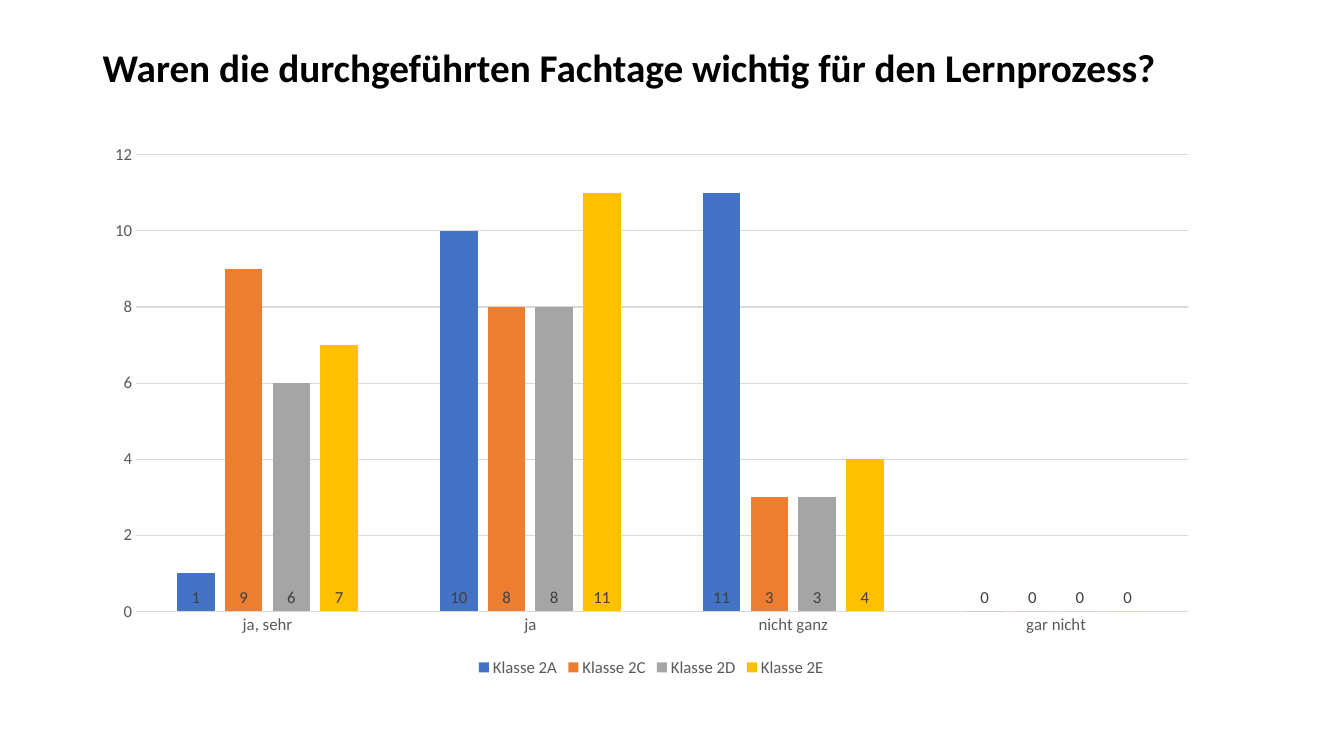
import pptx
import pptx.chart.data
import pptx.dml.color
import pptx.enum.chart
import pptx.enum.text
import pptx.util

EMU_PER_PX = 9144  # 100 px to the inch
COLORS = {
    "title": "000000",
    "axis": "595959",
    "label": "404040",
    "grid": "D9D9D9",
    "Klasse 2A": "4472C4",
    "Klasse 2C": "ED7D31",
    "Klasse 2D": "A5A5A5",
    "Klasse 2E": "FFC000",
}
ANSWERS = ["ja, sehr", "ja", "nicht ganz", "gar nicht"]
VOTES = {
    "Klasse 2A": (1, 10, 11, 0),
    "Klasse 2C": (9, 8, 3, 0),
    "Klasse 2D": (6, 8, 3, 0),
    "Klasse 2E": (7, 11, 4, 0),
}


def px(length):
    return pptx.util.Emu(length * EMU_PER_PX)


def rgb(name):
    return pptx.dml.color.RGBColor.from_string(COLORS[name])


def format_font(font, size, color, bold=False):
    font.name = "Calibri"
    font.size = pptx.util.Pt(size)
    font.bold = bold
    font.color.rgb = rgb(color)


def write_text(text_frame, text, size=12, color="title", bold=False, spacing=1.0):
    paragraph = text_frame.paragraphs[0]
    paragraph.line_spacing = spacing
    run = paragraph.add_run()
    run.text = text
    format_font(run.font, size, color, bold)


class SlideBuilder:
    def __init__(self, slide, chart_size=12):
        self.slide = slide
        self.chart_size = chart_size

    def add_title(self, text, left, top, width, height):
        text_frame = self.slide.shapes.add_textbox(
            px(left), px(top), px(width), px(height)).text_frame
        text_frame.word_wrap = True
        text_frame.vertical_anchor = pptx.enum.text.MSO_ANCHOR.MIDDLE
        write_text(text_frame, text, size=28, bold=True, spacing=0.9)

    def add_column_chart(self, categories, series, left, top, width, height):
        data = pptx.chart.data.CategoryChartData()
        data.categories = categories
        for name, values in series.items():
            data.add_series(name, values)
        chart = self.slide.shapes.add_chart(
            pptx.enum.chart.XL_CHART_TYPE.COLUMN_CLUSTERED,
            px(left), px(top), px(width), px(height), data).chart
        chart.has_title = False
        format_font(chart.font, self.chart_size, "axis")
        self.style_columns(chart.plots[0])
        self.style_axes(chart)

        # Legend
        chart.has_legend = True
        chart.legend.position = pptx.enum.chart.XL_LEGEND_POSITION.BOTTOM
        chart.legend.include_in_layout = False
        format_font(chart.legend.font, self.chart_size, "axis")

    def style_columns(self, plot):
        plot.gap_width = 219
        plot.overlap = -27
        plot.vary_by_categories = False
        for series in plot.series:
            series.format.fill.solid()
            series.format.fill.fore_color.rgb = rgb(series.name)
            labels = series.data_labels
            labels.show_value = True
            labels.position = pptx.enum.chart.XL_LABEL_POSITION.INSIDE_BASE
            format_font(labels.font, self.chart_size, "label")

    def style_axes(self, chart):
        for axis in (chart.category_axis, chart.value_axis):
            axis.major_tick_mark = pptx.enum.chart.XL_TICK_MARK.NONE
            axis.minor_tick_mark = pptx.enum.chart.XL_TICK_MARK.NONE
            format_font(axis.tick_labels.font, self.chart_size, "axis")
        chart.value_axis.minimum_scale = 0
        chart.value_axis.maximum_scale = 12
        chart.value_axis.major_unit = 2
        chart.value_axis.format.line.fill.background()
        chart.value_axis.has_major_gridlines = True
        gridlines = chart.value_axis.major_gridlines
        for line in (chart.category_axis.format.line, gridlines.format.line):
            line.color.rgb = rgb("grid")
            line.width = pptx.util.Pt(0.75)


def main():
    presentation = pptx.Presentation()
    presentation.slide_width = px(1333)
    presentation.slide_height = px(750)
    slide = presentation.slides.add_slide(presentation.slide_layouts[6])
    builder = SlideBuilder(slide)

    # Question
    builder.add_title(
        "Waren die durchgeführten Fachtage wichtig für den Lernprozess?",
        92, 40, 1150, 58)

    # Answers by class
    builder.add_column_chart(ANSWERS, VOTES, 92, 133, 1108, 543)

    presentation.save("out.pptx")


if __name__ == "__main__":
    main()
